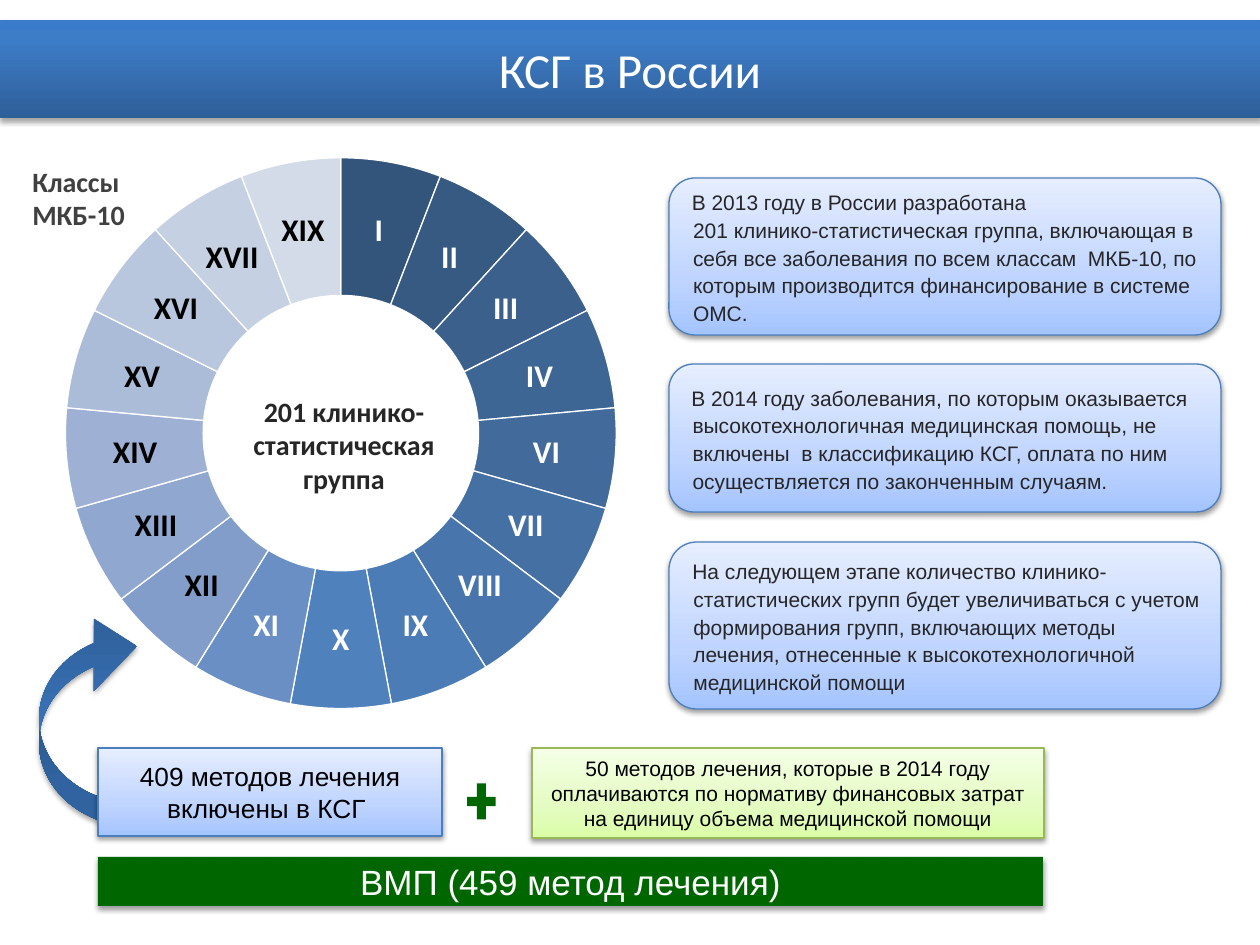
from dataclasses import dataclass
from typing import Optional

from lxml import etree
from pptx import Presentation
from pptx import util as u
from pptx.chart import data as chart_data
from pptx.dml.color import RGBColor
from pptx.enum import chart as charts, shapes, text
from pptx.oxml import ns, parse_xml

EMU_PER_PX = 914400 / 126

WHITE = RGBColor(0xFF, 0xFF, 0xFF)
BLACK = RGBColor(0x00, 0x00, 0x00)
INK = RGBColor(0x26, 0x26, 0x26)
GRAY = RGBColor(0x40, 0x40, 0x40)
GREEN = RGBColor(0x00, 0x66, 0x00)
BLUE_LINE = RGBColor(0x4B, 0x7E, 0xBC)
LIME_LINE = RGBColor(0x98, 0xB9, 0x55)

Stops = tuple[tuple[int, RGBColor], ...]
DEEP_BLUE: Stops = ((0, RGBColor(0x2F, 0x5F, 0x99)), (80, RGBColor(0x3D, 0x7C, 0xC7)),
                    (100, RGBColor(0x3A, 0x7C, 0xCB)))
PALE_BLUE: Stops = ((0, RGBColor(0xA4, 0xC4, 0xFF)), (35, RGBColor(0xBF, 0xD4, 0xFF)),
                    (100, RGBColor(0xE6, 0xEE, 0xFF)))
PALE_LIME: Stops = ((0, RGBColor(0xDA, 0xFD, 0xA7)), (35, RGBColor(0xE4, 0xFC, 0xC2)),
                    (100, RGBColor(0xF5, 0xFF, 0xE7)))

CLASSES = ("I", "II", "III", "IV", "VI", "VII", "VIII", "IX", "X",
           "XI", "XII", "XIII", "XIV", "XV", "XVI", "XVII", "XIX")
WHITE_LABELS = 10
RING_ANCHORS = ((0, RGBColor(0x34, 0x55, 0x7B)), (8, RGBColor(0x4F, 0x81, 0xBD)),
                (10, RGBColor(0x83, 0x9D, 0xCA)), (16, RGBColor(0xD3, 0xDA, 0xE8)))


@dataclass(frozen=True)
class Box:
    left: int
    top: int
    width: int
    height: int

    def emu(self) -> tuple[int, ...]:
        return tuple(round(n * EMU_PER_PX) for n in (self.left, self.top, self.width, self.height))


@dataclass(frozen=True)
class Panel:
    box: Box
    words: str
    size: int
    stops: Optional[Stops] = None
    line: Optional[RGBColor] = None
    color: RGBColor = BLACK


@dataclass(frozen=True)
class Note:
    box: Box
    words: str
    space_before: int


@dataclass(frozen=True)
class Caption:
    box: Box
    words: str
    color: RGBColor
    alignment: text.PP_ALIGN


PANELS = (
    Panel(Box(98, 857, 945, 49), "ВМП (459 метод лечения)", 20, color=WHITE),
    Panel(Box(532, 748, 512, 90),
          "50 методов лечения, которые в 2014 году оплачиваются по нормативу "
          "финансовых затрат на единицу объема медицинской помощи", 12, PALE_LIME, LIME_LINE),
    Panel(Box(98, 748, 344, 88), "409 методов лечения включены в КСГ ", 15, PALE_BLUE, BLUE_LINE),
)
NOTES = (
    Note(Box(669, 178, 552, 157),
         "В 2013 году в России разработана \v201 клинико-статистическая группа, включающая "
         "в себя все заболевания по всем классам  МКБ-10, по которым производится "
         "финансирование в системе ОМС.", 6),
    Note(Box(669, 364, 552, 148),
         "В 2014 году заболевания, по которым оказывается высокотехнологичная медицинская "
         "помощь, не включены  в классификацию КСГ, оплата по ним осуществляется по "
         "законченным случаям.", 12),
    Note(Box(669, 542, 552, 167),
         "На следующем этапе количество клинико-статистических групп будет увеличиваться "
         "с учетом формирования групп, включающих методы лечения, отнесенные к "
         "высокотехнологичной \vмедицинской помощи", 12),
)
CAPTIONS = (
    Caption(Box(206, 388, 276, 115), "201 клинико-статистическая группа", INK,
            text.PP_ALIGN.CENTER),
    Caption(Box(20, 158, 227, 81), "Классы \vМКБ-10", GRAY, text.PP_ALIGN.LEFT),
)


def ring_color(index: int) -> RGBColor:
    for (start, first), (end, last) in zip(RING_ANCHORS, RING_ANCHORS[1:]):
        if index <= end:
            share = (index - start) / (end - start)
            return RGBColor(*(round(a + (b - a) * share) for a, b in zip(first, last)))
    return RING_ANCHORS[-1][1]


def place(shape, box: Box) -> None:
    shape.left, shape.top, shape.width, shape.height = box.emu()


def paint(shape, stops: Optional[Stops], line: Optional[RGBColor] = None) -> None:
    if stops:
        shape.fill.gradient()
        shape.fill.gradient_angle = 90
        stop_list = shape._element.spPr.find(ns.qn("a:gradFill")).find(ns.qn("a:gsLst"))
        for stop in list(stop_list):
            stop_list.remove(stop)
        for position, color in stops:
            stop = etree.SubElement(stop_list, ns.qn("a:gs"), pos=str(position * 1000))
            etree.SubElement(stop, ns.qn("a:srgbClr"), val=str(color))
    else:
        shape.fill.solid()
        shape.fill.fore_color.rgb = GREEN
    if line:
        shape.line.color.rgb = line
        shape.line.width = u.Pt(0.75)
    else:
        shape.line.fill.background()
    shape.shadow.inherit = False


def cast_shadow(shape, opacity: int, distance: float) -> None:
    effects = shape._element.spPr.find(ns.qn("a:effectLst"))
    shadow = etree.SubElement(effects, ns.qn("a:outerShdw"), blurRad=str(u.Pt(3.1)),
                              dist=str(u.Pt(distance)), dir="5400000", rotWithShape="0")
    color = etree.SubElement(shadow, ns.qn("a:srgbClr"), val=str(BLACK))
    etree.SubElement(color, ns.qn("a:alpha"), val=str(opacity * 1000))


def write(shape, words: str, size: int, color: RGBColor, font_name: str,
          alignment: text.PP_ALIGN, bold: bool = False):
    frame = shape.text_frame
    frame.text = words
    frame.word_wrap = True
    paragraph = frame.paragraphs[0]
    paragraph.alignment = alignment
    for run in paragraph.runs:
        run.font.name = font_name
        run.font.size = u.Pt(size)
        run.font.bold = bold
        run.font.color.rgb = color
    return paragraph


def draw_title(slide) -> None:
    title = slide.shapes.title
    place(title, Box(0, 20, 1260, 98))
    paint(title, DEEP_BLUE)
    cast_shadow(title, 35, 1.8)
    write(title, "КСГ в России", 28, WHITE, "Calibri", text.PP_ALIGN.CENTER)
    title.text_frame.auto_size = text.MSO_AUTO_SIZE.NONE
    title.text_frame.vertical_anchor = text.MSO_ANCHOR.MIDDLE


def draw_ring(slide) -> None:
    values = chart_data.CategoryChartData()
    values.categories = CLASSES
    values.add_series("Series 1", [6] * len(CLASSES))
    chart = slide.shapes.add_chart(charts.XL_CHART_TYPE.DOUGHNUT,
                                   *Box(29, 117, 1134, 680).emu(), values).chart
    chart.has_title = False
    chart.has_legend = False
    chart.font.name = "Calibri"
    chart.font.size = u.Pt(18)
    chart.font.color.rgb = BLACK
    series = chart.plots[0].series[0]
    series.data_labels.show_category_name = True
    series.data_labels.show_value = False
    for index in range(len(CLASSES)):
        point = series.points[index]
        point.format.fill.solid()
        point.format.fill.fore_color.rgb = ring_color(index)
        point.format.line.color.rgb = WHITE
        point.format.line.width = u.Pt(0.75)
        font = point.data_label.font
        font.name = "Calibri"
        font.size = u.Pt(18)
        font.bold = True
        font.color.rgb = WHITE if index < WHITE_LABELS else BLACK
    for tag, state in (("c:showVal", "0"), ("c:showCatName", "1")):
        for flag in series._element.iter(ns.qn(tag)):
            flag.set("val", state)
    plot_area = chart._chartSpace.chart.plotArea
    for layout in plot_area.findall(ns.qn("c:layout")):
        plot_area.remove(layout)
    plot_area.insert(0, parse_xml(
        f'<c:layout {ns.nsdecls("c")}><c:manualLayout><c:layoutTarget val="inner"/>'
        '<c:xMode val="edge"/><c:yMode val="edge"/><c:x val="0.03"/><c:y val="0.06"/>'
        '<c:w val="0.49"/><c:h val="0.81"/></c:manualLayout></c:layout>'))


def draw_caption(slide, caption: Caption) -> None:
    shape = slide.shapes.add_textbox(*caption.box.emu())
    write(shape, caption.words, 16, caption.color, "Calibri", caption.alignment, bold=True)


def draw_arrow(slide) -> None:
    arrow = slide.shapes.add_shape(shapes.MSO_SHAPE.CURVED_RIGHT_ARROW,
                                   *Box(39, 610, 98, 217).emu())
    for index, value in enumerate((0.24, 0.74, 0.44)):
        arrow.adjustments[index] = value
    arrow._element.spPr.find(ns.qn("a:xfrm")).set("flipV", "1")
    paint(arrow, DEEP_BLUE)
    cast_shadow(arrow, 35, 1.8)


def draw_panel(slide, panel: Panel) -> None:
    shape = slide.shapes.add_shape(shapes.MSO_SHAPE.RECTANGLE, *panel.box.emu())
    paint(shape, panel.stops, panel.line)
    cast_shadow(shape, 38, 1.6)
    write(shape, panel.words, panel.size, panel.color, "Arial", text.PP_ALIGN.CENTER)
    shape.text_frame.vertical_anchor = text.MSO_ANCHOR.MIDDLE


def draw_note(slide, note: Note) -> None:
    shape = slide.shapes.add_shape(shapes.MSO_SHAPE.ROUNDED_RECTANGLE, *note.box.emu())
    paint(shape, PALE_BLUE, BLUE_LINE)
    cast_shadow(shape, 38, 1.6)
    paragraph = write(shape, note.words, 12, INK, "Arial", text.PP_ALIGN.LEFT)
    paragraph.line_spacing = 1.1
    paragraph.space_before = u.Pt(note.space_before)
    properties = paragraph._p.get_or_add_pPr()
    properties.set("marL", str(u.Inches(0.09)))
    properties.set("indent", str(u.Inches(-0.01)))
    frame = shape.text_frame
    frame.vertical_anchor = text.MSO_ANCHOR.MIDDLE
    frame.margin_left = frame.margin_right = u.Inches(0.04)
    frame.margin_top = frame.margin_bottom = u.Inches(0.04)


def main() -> None:
    presentation = Presentation()
    presentation.slide_width, presentation.slide_height = u.Inches(10), u.Inches(7.5)
    slide = presentation.slides.add_slide(presentation.slide_layouts[5])
    draw_title(slide)
    draw_ring(slide)
    for caption in CAPTIONS:
        draw_caption(slide, caption)
    draw_arrow(slide)
    for panel in PANELS:
        draw_panel(slide, panel)
    plus = slide.shapes.add_shape(shapes.MSO_SHAPE.MATH_PLUS, *Box(462, 777, 39, 49).emu())
    paint(plus, None)
    for note in NOTES:
        draw_note(slide, note)
    presentation.save("out.pptx")


if __name__ == "__main__":
    main()
